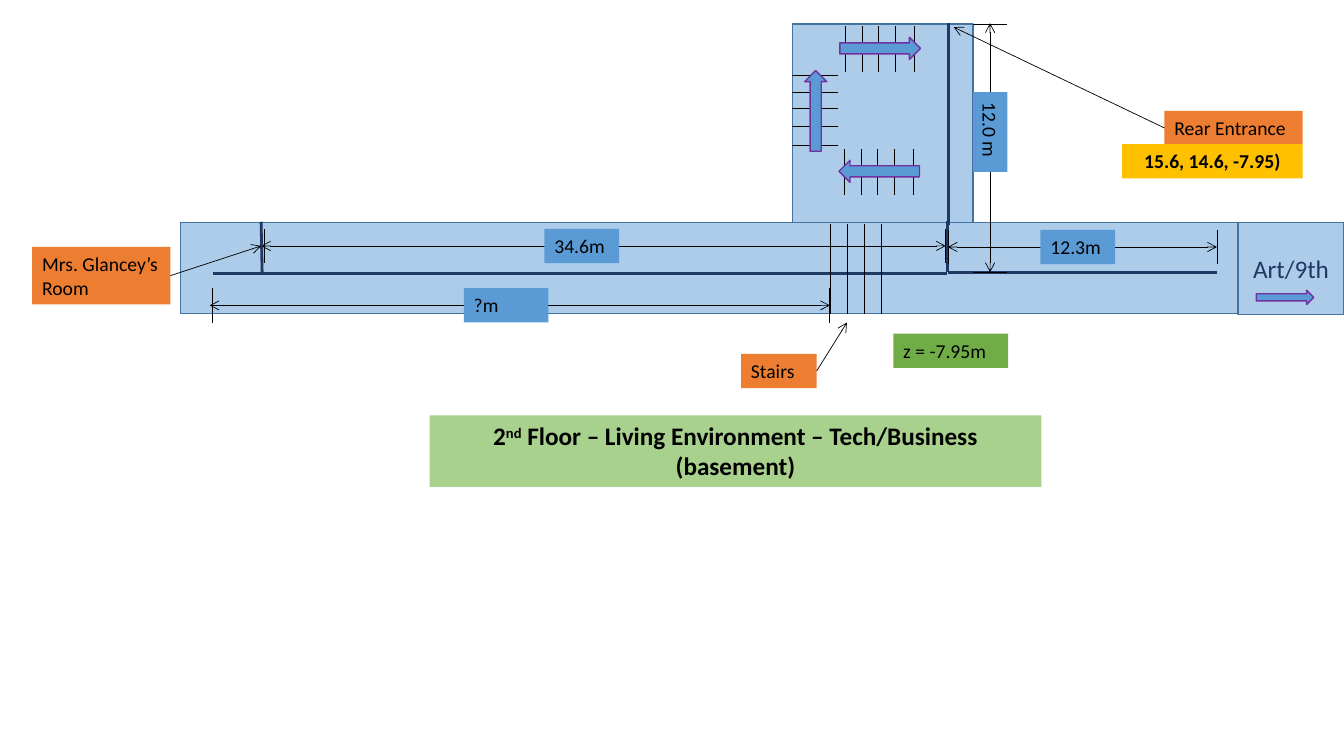
from pptx import Presentation
from pptx.dml.color import RGBColor
from pptx.enum.shapes import MSO_CONNECTOR, MSO_SHAPE
from pptx.enum.text import MSO_ANCHOR, MSO_AUTO_SIZE, PP_ALIGN
from pptx.util import Inches, Pt
from lxml.etree import SubElement
from pptx.oxml.ns import qn

COLORS = {
    "blue": "5B9BD5", "outline": "43739E", "navy": "203864", "black": "000000",
    "orange": "ED7D31", "gold": "FFC000", "green": "70AD47",
    "light_green": "A9D18E", "purple": "7030A0",
}


class FloorPlan:
    font = "Calibri"
    tick = 0.17

    def __init__(self, slide):
        self.s = slide

    def color(self, name):
        return RGBColor.from_string(COLORS[name])

    def style_run(self, r, size, color="black", bold=False):
        r.font.name = self.font
        r.font.size = Pt(size)
        r.font.bold = bold
        r.font.color.rgb = self.color(color)

    def shape(self, x, y, w, h, fill, line=None, kind=MSO_SHAPE.RECTANGLE):
        sp = self.s.shapes.add_shape(kind, Inches(x), Inches(y), Inches(w), Inches(h))
        sp.shadow.inherit = False
        sp.fill.solid()
        sp.fill.fore_color.rgb = self.color(fill)
        if line:
            sp.line.color.rgb = self.color(line)
            sp.line.width = Pt(1)
        else:
            sp.line.fill.background()
        return sp

    def room(self, x, y, w, h):
        sp = self.shape(x, y, w, h, "blue", "outline")
        rgb = sp._element.spPr.find(qn("a:solidFill")).find(qn("a:srgbClr"))
        SubElement(rgb, qn("a:alpha")).set("val", "50000")
        return sp

    def add_text(self, sp, text, size=14, color="black", bold=False,
                 align=PP_ALIGN.LEFT, anchor=MSO_ANCHOR.TOP):
        tf = sp.text_frame
        tf.word_wrap = True
        tf.vertical_anchor = anchor
        tf.text = text
        p = tf.paragraphs[0]
        p.alignment = align
        self.style_run(p.runs[0], size, color, bold)

    def label(self, x, y, w, h, text, fill, **style):
        sp = self.shape(x, y, w, h, fill)
        self.add_text(sp, text, **style)
        return sp

    def line(self, x1, y1, x2, y2, color="black", width=0.5, ends=()):
        c = self.s.shapes.add_connector(
            MSO_CONNECTOR.STRAIGHT, Inches(x1), Inches(y1), Inches(x2), Inches(y2))
        c.line.color.rgb = self.color(color)
        c.line.width = Pt(width)
        ln = c._element.spPr.find(qn("a:ln"))
        for end in ends:
            SubElement(ln, qn("a:" + end)).set("type", "arrow")
        SubElement(c._element.spPr, qn("a:effectLst"))
        return c

    def route(self, x1, y1, x2, y2):
        self.line(x1, y1, x2, y2, "navy", 2)

    def leader(self, sp, side, x, y):
        c = self.line(0, 0, x, y, ends=("tailEnd",))
        c.begin_connect(sp, side)

    def dimension(self, start, end, level, inset, text, center, width, vertical=False):
        def place(along, across):
            return (across, along) if vertical else (along, across)

        self.line(*place(start, level), *place(end, level), ends=("headEnd", "tailEnd"))
        for mark in (end, start + inset):
            self.line(*place(mark, level - self.tick), *place(mark, level + self.tick))
        cx, cy = place(center, level)
        sp = self.label(cx - width / 2, cy - self.tick, width, 2 * self.tick, text, "blue")
        sp.rotation = 90 if vertical else 0

    def arrow(self, x, y, w, h):
        return self.shape(x, y, w, h, "blue", "purple", MSO_SHAPE.RIGHT_ARROW)

    def flight(self, cx, cy, rotation):
        for step in (-0.35, -0.18, -0.02, 0.15, 0.34):
            if rotation == 270:
                self.line(cx - 0.23, cy + step, cx + 0.22, cy + step)
            else:
                self.line(cx + step, cy - 0.22, cx + step, cy + 0.23)
        self.arrow(cx - 0.4, cy - 0.11, 0.8, 0.22).rotation = rotation

    def title(self, x, y, w, h, parts):
        sp = self.s.shapes.title
        sp.left, sp.top, sp.width, sp.height = (Inches(v) for v in (x, y, w, h))
        sp.fill.solid()
        sp.fill.fore_color.rgb = self.color("light_green")
        tf = sp.text_frame
        tf.word_wrap = True
        tf.auto_size = MSO_AUTO_SIZE.NONE
        tf.vertical_anchor = MSO_ANCHOR.TOP
        p = tf.paragraphs[0]
        p.alignment = PP_ALIGN.CENTER
        for text, baseline in parts:
            r = p.add_run()
            r.text = text
            self.style_run(r, 18, bold=True)
            if baseline:
                r.font._element.set("baseline", str(baseline))


def main():
    prs = Presentation()
    prs.slide_width = Inches(13.33)
    prs.slide_height = Inches(7.5)
    plan = FloorPlan(prs.slides.add_slide(prs.slide_layouts[5]))

    plan.title(4.26, 4.12, 6.07, 0.71, [
        ("2", 0), ("nd", 30000),
        (" Floor – Living Environment – Tech/Business (basement)", 0)])

    plan.room(7.86, 0.24, 1.79, 1.97)
    plan.room(1.79, 2.21, 10.49, 0.9)
    for ends in ((2.11, 2.71, 6.32, 2.71), (6.32, 2.71, 9.39, 2.71),
                 (9.4, 2.19, 9.4, 2.7), (9.4, 2.7, 12.07, 2.7)):
        plan.route(*ends)

    plan.dimension(0.23, 2.7, 9.82, 0.01, "12.0 m", 1.31, 0.79, vertical=True)
    plan.dimension(2.59, 9.38, 2.44, 0.03, "34.6m", 5.77, 0.74)
    plan.dimension(9.4, 12.07, 2.45, 0.01, "12.3m", 10.69, 0.74)
    plan.dimension(2.08, 8.23, 3.03, 0.03, "?m", 5.02, 0.84)

    for x in (8.24, 8.4, 8.57, 8.74):
        plan.line(x, 2.22, x, 3.12)

    entrance = plan.label(11.55, 1.1, 1.37, 0.34, "Rear Entrance", "orange")
    plan.leader(entrance, 1, 9.46, 0.27)
    stairs = plan.label(7.35, 3.51, 0.75, 0.34, "Stairs", "orange")
    plan.leader(stairs, 3, 8.4, 3.2)
    plan.label(8.86, 3.31, 1.14, 0.34, "z = -7.95m", "green")

    plan.route(2.59, 2.2, 2.6, 2.71)
    classroom = plan.label(0.32, 2.45, 1.37, 0.57, "Mrs. Glancey’s Room", "orange")
    plan.leader(classroom, 3, 2.59, 2.44)

    art = plan.room(12.28, 2.21, 1.05, 0.91)
    plan.add_text(art, "Art/9th", size=18, color="navy",
                  align=PP_ALIGN.CENTER, anchor=MSO_ANCHOR.MIDDLE)
    plan.arrow(12.46, 2.88, 0.57, 0.14)

    for flight in ((8.73, 0.48, 0), (8.72, 1.7, 180), (8.09, 1.1, 270)):
        plan.flight(*flight)

    plan.route(9.41, 0.23, 9.41, 2.23)
    plan.label(11.13, 1.43, 1.79, 0.34, "15.6, 14.6, -7.95)", "gold",
               bold=True, align=PP_ALIGN.CENTER)

    prs.save("out.pptx")


if __name__ == "__main__":
    main()
